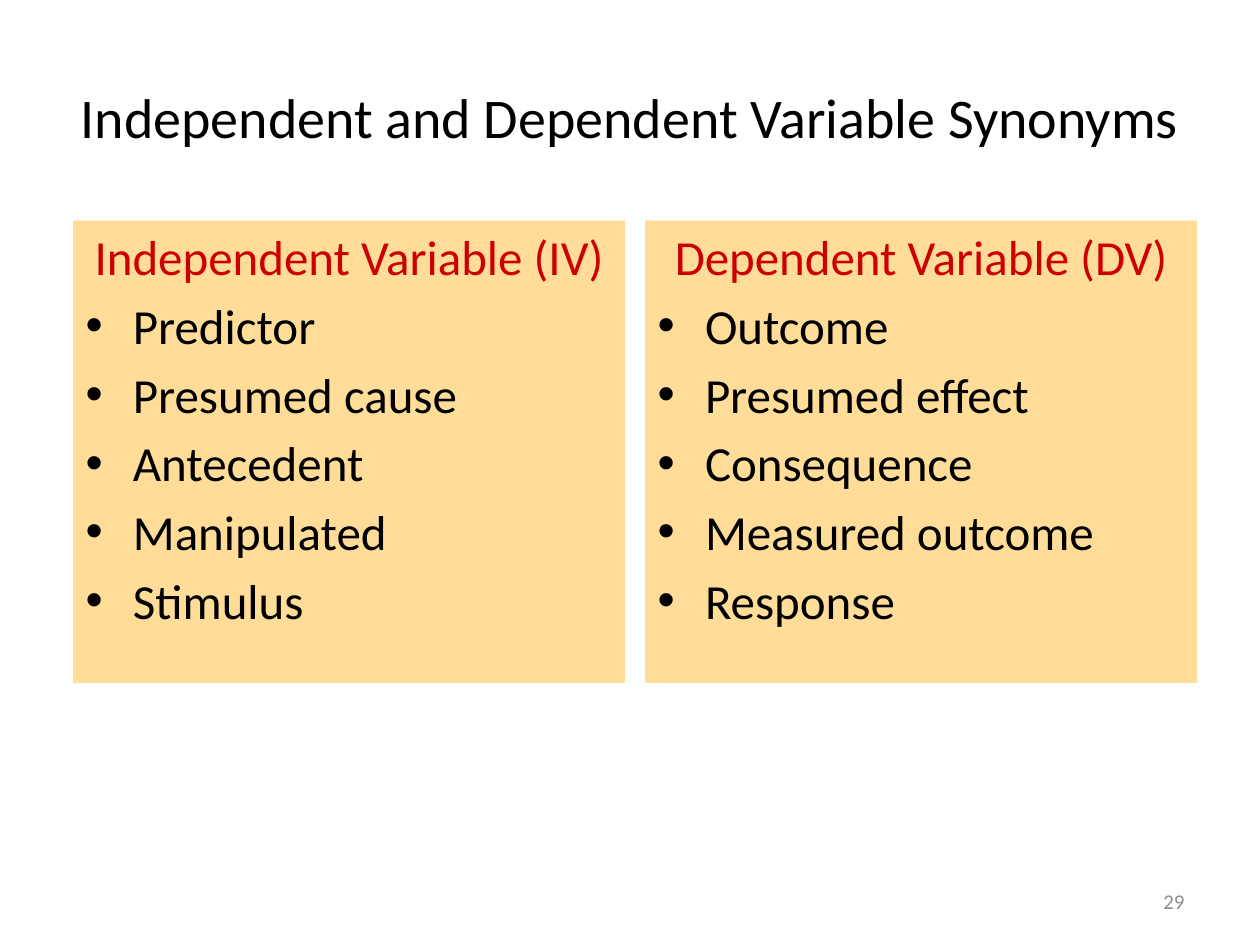
"""Build a slide that lists synonyms for independent and dependent variables."""
from lxml.etree import SubElement
from pptx import Presentation
from pptx.dml.color import RGBColor
from pptx.enum.text import MSO_ANCHOR, MSO_AUTO_SIZE, PP_ALIGN
from pptx.oxml.ns import qn
from pptx.util import Inches, Pt

COLORS = {"text": "000000", "heading": "CC0000", "panel": "FFDD99", "number": "8C8C8C"}
PANEL_LEFT, PANEL_TOP, PANEL_WIDTH, PANEL_HEIGHT = 0.58, 1.75, 4.38, 3.67
COLUMN_STEP = 4.54
PANELS = [
    ("Independent Variable (IV)", "Predictor", "Presumed cause", "Antecedent", "Manipulated", "Stimulus"),
    ("Dependent Variable (DV)", "Outcome", "Presumed effect", "Consequence", "Measured outcome", "Response"),
]


def place(box, left, top, width, height, anchor):
    bounds = {"left": left, "top": top, "width": width, "height": height}
    for name, value in bounds.items():
        setattr(box, name, Inches(value))
    frame_format = {"word_wrap": True, "auto_size": MSO_AUTO_SIZE.NONE, "vertical_anchor": anchor}
    for name, value in frame_format.items():
        setattr(box.text_frame, name, value)


def write(para, text, size, color, align):
    para.alignment = align
    span = para.add_run()
    span.text = text
    for name, value in {"name": "Calibri", "size": Pt(size)}.items():
        setattr(span.font, name, value)
    span.font.color.rgb = RGBColor.from_string(COLORS[color])


deck = Presentation()
deck.slide_width, deck.slide_height = Inches(10), Inches(7.5)
page = deck.slides.add_slide(deck.slide_layouts.get_by_name("Two Content"))

title = page.shapes.title
place(title, 0.5, 0.3, 9, 1.25, MSO_ANCHOR.MIDDLE)
write(title.text_frame.paragraphs[0], "Independent and Dependent Variable Synonyms", 32, "text", PP_ALIGN.CENTER)

for column, (heading, *synonyms) in enumerate(PANELS):
    panel = page.placeholders[column + 1]
    place(panel, PANEL_LEFT + column * COLUMN_STEP, PANEL_TOP, PANEL_WIDTH, PANEL_HEIGHT, MSO_ANCHOR.TOP)
    panel.fill.solid()
    panel.fill.fore_color.rgb = RGBColor.from_string(COLORS["panel"])
    heading_para = panel.text_frame.paragraphs[0]
    write(heading_para, heading, 28, "heading", PP_ALIGN.CENTER)
    SubElement(heading_para._p.get_or_add_pPr(), qn("a:buNone"))
    for synonym in synonyms:
        write(panel.text_frame.add_paragraph(), synonym, 28, "text", PP_ALIGN.LEFT)

number = page.shapes.add_textbox(0, 0, 0, 0)
place(number, 7.17, 6.95, 2.33, 0.4, MSO_ANCHOR.MIDDLE)
write(number.text_frame.paragraphs[0], "29", 12, "number", PP_ALIGN.RIGHT)

deck.save("out.pptx")
